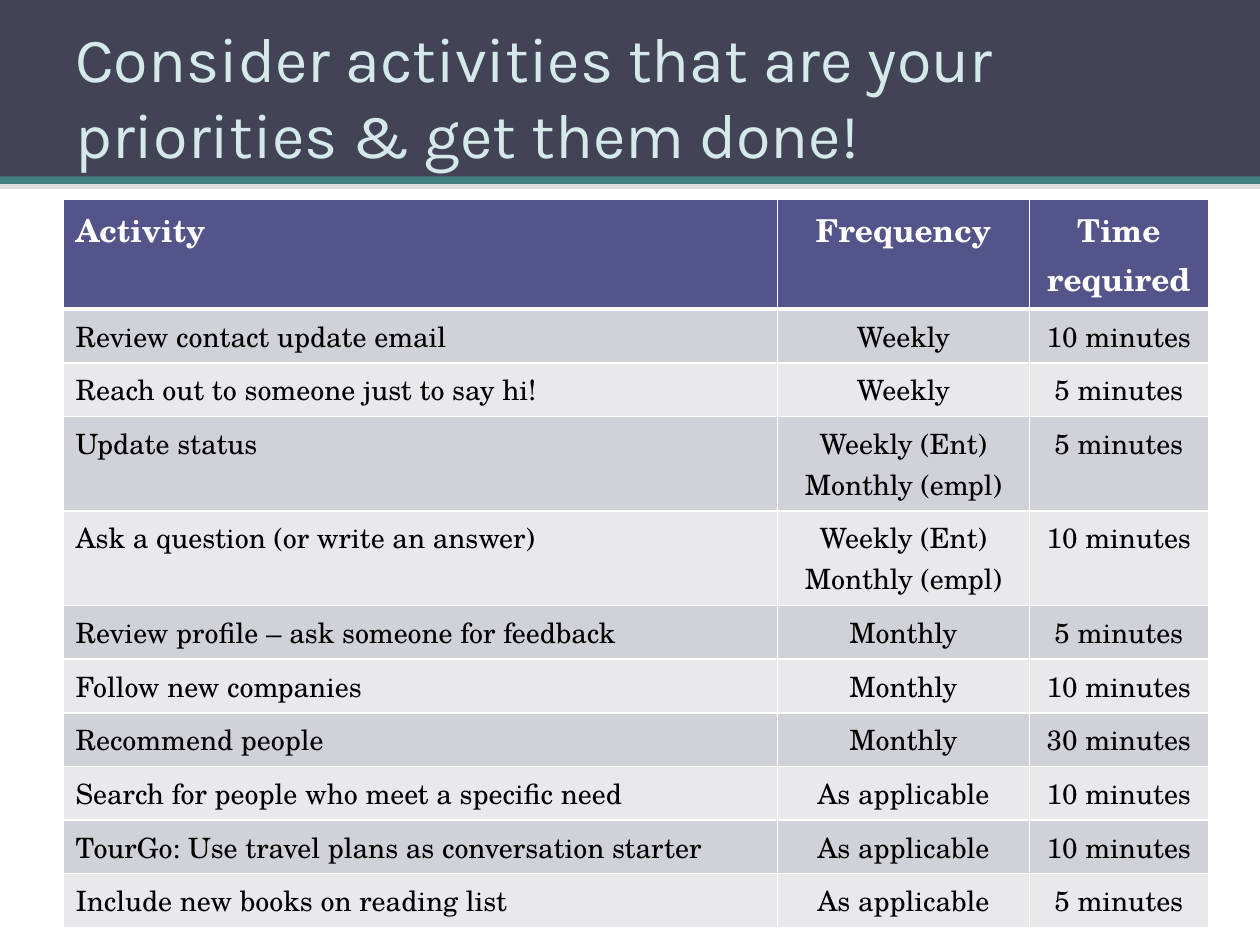
from lxml.etree import SubElement
from pptx import Presentation
from pptx.dml.color import RGBColor
from pptx.enum.shapes import MSO_CONNECTOR, MSO_SHAPE
from pptx.enum.text import MSO_ANCHOR, PP_ALIGN
from pptx.oxml import parse_xml
from pptx.oxml.ns import nsdecls, qn
from pptx.util import Inches, Pt

TITLE = "Consider activities that are your priorities & get them done!"
HEADINGS = ("Activity", "Frequency", "Time required")
ACTIVITIES = [
    ("Review contact update email", "Weekly", "10 minutes"),
    ("Reach out to someone just to say hi!", "Weekly", "5 minutes"),
    ("Update status", "Weekly (Ent)\nMonthly (empl)", "5 minutes"),
    ("Ask a question (or write an answer)", "Weekly (Ent)\nMonthly (empl)", "10 minutes"),
    ("Review profile – ask someone for feedback", "Monthly", "5 minutes"),
    ("Follow new companies", "Monthly", "10 minutes"),
    ("Recommend people", "Monthly", "30 minutes"),
    ("Search for people who meet a specific need", "As applicable", "10 minutes"),
    ("TourGo: Use travel plans as conversation starter", "As applicable", "10 minutes"),
    ("Include new books on reading list", "As applicable", "5 minutes"),
]
COLUMN_WIDTHS = (5.67, 2, 1.42)
COLUMN_ALIGNMENTS = (PP_ALIGN.LEFT, PP_ALIGN.CENTER, PP_ALIGN.CENTER)
ROW_HEIGHT = 0.41
BANNER_BANDS = [(0, 1.42, "banner"), (1.4, 0.1, "accent")]

THEME = {
    "banner": "424456",
    "accent": "438086",
    "rule": "DEDEDE",
    "header_fill": "53548A",
    "row_fills": ("D1D1DA", "E9E9ED"),
    "border": "FFFFFF",
    "title": {"name": "Karla", "size": Pt(36), "bold": False, "color": "D6E9EA"},
    "header": {"name": "TeX Gyre Schola", "size": Pt(18), "bold": True, "color": "FFFFFF"},
    "body": {"name": "TeX Gyre Schola", "size": Pt(16), "bold": False, "color": "000000"},
}


def rgb(value):
    return RGBColor.from_string(value)


def apply_font(font, style):
    for attribute, value in style.items():
        if attribute == "color":
            font.color.rgb = rgb(value)
        else:
            setattr(font, attribute, value)


def add_banner(slide, width):
    for top, height, color in BANNER_BANDS:
        band = slide.shapes.add_shape(
            MSO_SHAPE.RECTANGLE, 0, Inches(top), width, Inches(height))
        band.shadow.inherit = False
        band.fill.solid()
        band.fill.fore_color.rgb = rgb(THEME[color])
        band.line.fill.background()
    rule = slide.shapes.add_connector(
        MSO_CONNECTOR.STRAIGHT, 0, Inches(1.48), width, Inches(1.48))
    rule.line.color.rgb = rgb(THEME["rule"])
    rule.line.width = Pt(3)
    SubElement(rule._element.spPr, qn("a:effectLst"))


def add_title(slide):
    title = slide.shapes.add_textbox(Inches(0.5), Inches(0.17), Inches(9), Inches(1.17))
    frame = title.text_frame
    frame.word_wrap = True
    frame.vertical_anchor = MSO_ANCHOR.MIDDLE
    frame.text = TITLE
    apply_font(frame.paragraphs[0].runs[0].font, THEME["title"])


def set_borders(cell, widths):
    properties = cell._tc.get_or_add_tcPr()
    for position, (side, width) in enumerate(widths.items()):
        border = parse_xml(
            f'<a:ln{side} {nsdecls("a")} w="{Pt(width)}"><a:solidFill>'
            f'<a:srgbClr val="{THEME["border"]}"/></a:solidFill></a:ln{side}>')
        properties.insert(position, border)


def add_schedule(slide):
    rows = [HEADINGS, *ACTIVITIES]
    schedule = slide.shapes.add_table(
        len(rows), len(HEADINGS), Inches(0.5), Inches(1.58),
        Inches(sum(COLUMN_WIDTHS)), Inches(ROW_HEIGHT * len(rows))).table
    for column, width in zip(schedule.columns, COLUMN_WIDTHS):
        column.width = Inches(width)
    for index, entries in enumerate(rows):
        is_header = index == 0
        schedule.rows[index].height = Inches(ROW_HEIGHT)
        fill = THEME["header_fill"] if is_header else THEME["row_fills"][(index - 1) % 2]
        style = THEME["header" if is_header else "body"]
        borders = {"L": 1, "R": 1, "T": 3 if index == 1 else 1, "B": 3 if is_header else 1}
        for column, entry in enumerate(entries):
            cell = schedule.cell(index, column)
            cell.text = entry
            cell.fill.solid()
            cell.fill.fore_color.rgb = rgb(fill)
            set_borders(cell, borders)
            for paragraph in cell.text_frame.paragraphs:
                paragraph.alignment = COLUMN_ALIGNMENTS[column]
                apply_font(paragraph.runs[0].font, style)


def main():
    presentation = Presentation()
    presentation.slide_width = Inches(10)
    presentation.slide_height = Inches(7.5)
    slide = presentation.slides.add_slide(presentation.slide_layouts[6])
    add_banner(slide, presentation.slide_width)
    add_schedule(slide)
    add_title(slide)
    presentation.save("out.pptx")


if __name__ == "__main__":
    main()
